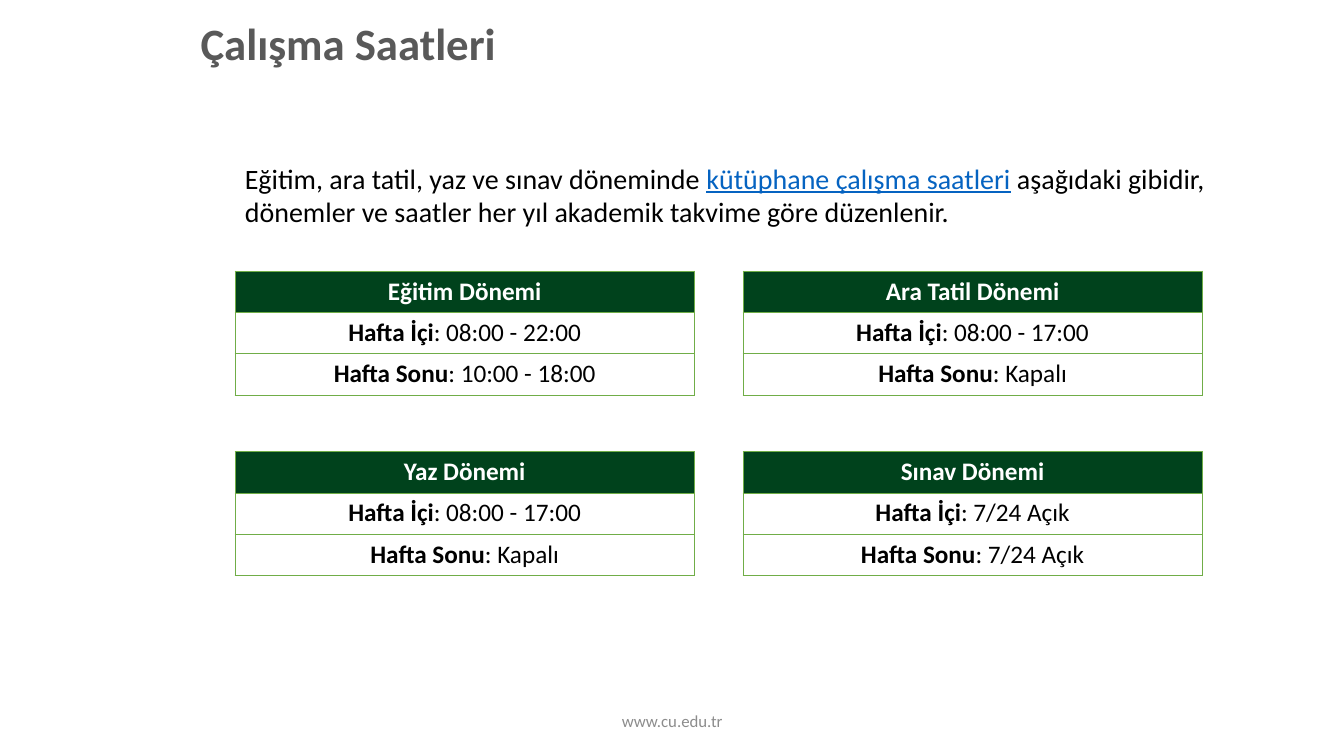
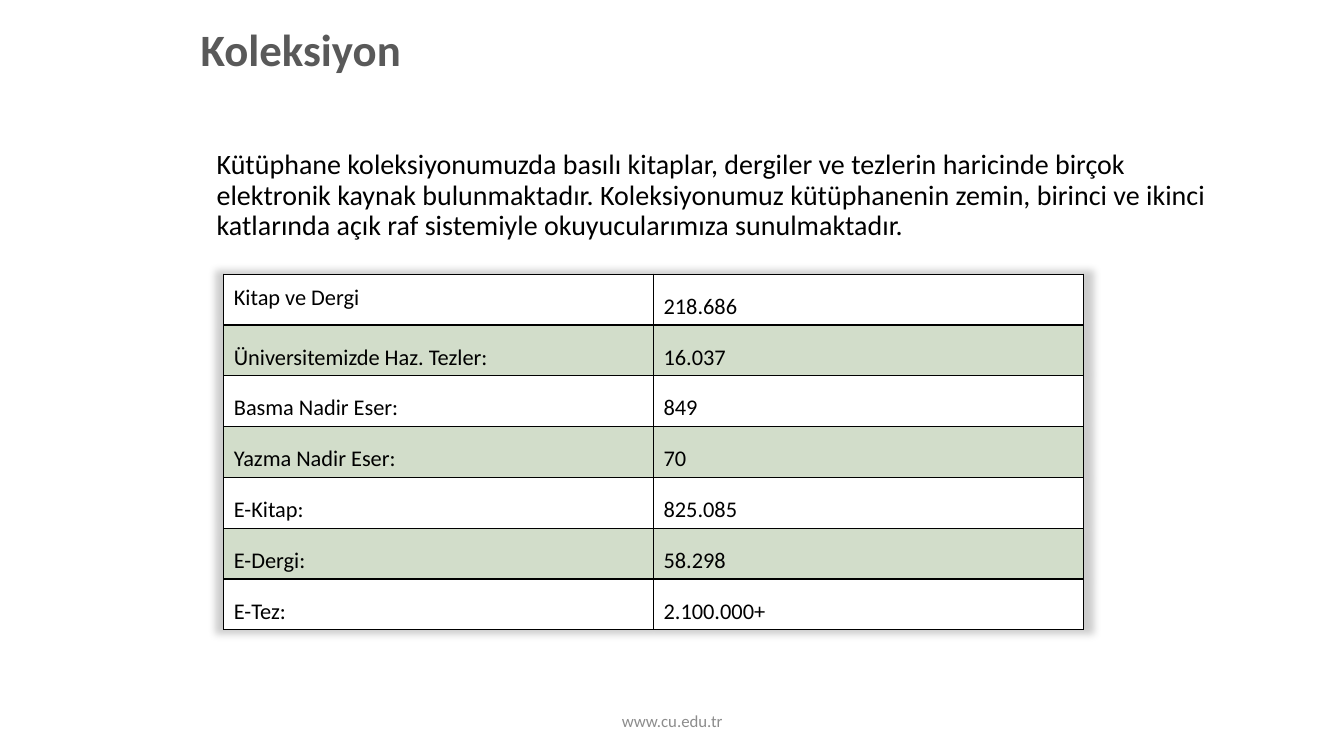
from dataclasses import dataclass

from lxml.etree import SubElement
from pptx import Presentation
from pptx.dml.color import RGBColor as RGB
from pptx.enum.text import MSO_ANCHOR as Anchor, MSO_AUTO_SIZE as Fit, PP_ALIGN as Align
from pptx.oxml import parse_xml
from pptx.oxml.ns import nsdecls, qn
from pptx.util import Cm, Pt


@dataclass(frozen=True)
class Theme:
    font: str = "Calibri"
    ink: str = "000000"
    paper: str = "FFFFFF"
    head: str = "595959"
    foot: str = "8C8C8C"
    link: str = "0563C1"
    dark: str = "00421C"
    edge: str = "70AD47"
    band: str = "D2DDCA"
    title_pt: int = 32
    text_pt: int = 20
    hours_pt: int = 18
    stock_pt: int = 16
    foot_pt: int = 12


T = Theme()
SITE = "www.cu.edu.tr"

HOURS_TITLE = "Çalışma Saatleri"
HOURS_TEXT = [
    ("Eğitim, ara tatil, yaz ve sınav döneminde ", False),
    ("kütüphane çalışma saatleri", True),
    (" aşağıdaki gibidir, dönemler ve saatler her yıl akademik takvime göre düzenlenir.", False),
]
DAYS = ("Hafta İçi", "Hafta Sonu")
TERMS = [
    ("Eğitim Dönemi", "08:00 - 22:00", "10:00 - 18:00"),
    ("Ara Tatil Dönemi", "08:00 - 17:00", "Kapalı"),
    ("Yaz Dönemi", "08:00 - 17:00", "Kapalı"),
    ("Sınav Dönemi", "7/24 Açık", "7/24 Açık"),
]

STOCK_TITLE = "Koleksiyon"
STOCK_TEXT = [(
    "Kütüphane koleksiyonumuzda basılı kitaplar, dergiler ve tezlerin haricinde "
    "birçok elektronik kaynak bulunmaktadır. Koleksiyonumuz kütüphanenin zemin, "
    "birinci ve ikinci katlarında açık raf sistemiyle okuyucularımıza sunulmaktadır.",
    False,
)]
STOCK = [
    ("Kitap ve Dergi", "218.686"),
    ("Üniversitemizde Haz. Tezler:", "16.037"),
    ("Basma Nadir Eser:", "849"),
    ("Yazma Nadir Eser:", "70"),
    ("E-Kitap:", "825.085"),
    ("E-Dergi:", "58.298"),
    ("E-Tez:", "2.100.000+"),
]


def style(para, size, color, bold=False, align=Align.LEFT, lines=None):
    para.alignment = align
    if lines:
        para.line_spacing = lines
    font = para.font
    font.name, font.size, font.bold = T.font, Pt(size), bold
    font.color.rgb = RGB.from_string(color)


def add_box(slide, at, anchor):
    frame = slide.shapes.add_textbox(*map(Cm, at)).text_frame
    frame.word_wrap = True
    frame.vertical_anchor = anchor
    return frame


def add_page(deck, title, top):
    """Add a slide with its title and the shared footer."""
    slide = deck.slides.add_slide(deck.slide_layouts[5])
    head = slide.shapes.title
    head.left, head.top, head.width, head.height = map(Cm, (4.8, top, 26.54, 1.57))
    frame = head.text_frame
    frame.text = title
    frame.auto_size = Fit.NONE
    frame.vertical_anchor = Anchor.MIDDLE
    style(frame.paragraphs[0], T.title_pt, T.head, bold=True, lines=0.9)

    foot = add_box(slide, (11.23, 17.65, 11.43, 1.02), Anchor.MIDDLE)
    foot.text = SITE
    style(foot.paragraphs[0], T.foot_pt, T.foot, align=Align.CENTER)
    return slide


def add_intro(slide, at, parts, anchor=Anchor.TOP, lines=None):
    para = add_box(slide, at, anchor).paragraphs[0]
    style(para, T.text_pt, T.ink, lines=lines)
    for text, linked in parts:
        run = para.add_run()
        run.text = text
        if linked:
            run.font.underline = True
            run.font.color.rgb = RGB.from_string(T.link)


def add_grid(slide, rows, cols, left, top, wide, high):
    """Add a plain table whose cells measure wide by high."""
    table = slide.shapes.add_table(
        rows, cols, Cm(left), Cm(top), Cm(wide * cols), Cm(high * rows)).table
    table.first_row = table.horz_banding = False
    for row in table.rows:
        row.height = Cm(high)
    return table


def paint(cell, fill, edge, width):
    props = cell._tc.get_or_add_tcPr()
    for side in ("lnL", "lnR", "lnT", "lnB"):
        line = SubElement(props, qn(f"a:{side}"), w=str(Pt(width)))
        SubElement(SubElement(line, qn("a:solidFill")), qn("a:srgbClr"), val=edge)
    cell.fill.solid()
    cell.fill.fore_color.rgb = RGB.from_string(fill)


def add_glow(table):
    """Put a soft shadow around the table."""
    table._tbl.tblPr.insert(0, parse_xml(
        f'<a:effectLst {nsdecls("a")}><a:outerShdw blurRad="63500" sx="102000" '
        'sy="102000" algn="ctr" rotWithShape="0"><a:prstClr val="black">'
        '<a:alpha val="20000"/></a:prstClr></a:outerShdw></a:effectLst>'))


def add_term(slide, left, top, name, *times):
    table = add_grid(slide, 3, 1, left, top, 11.58, 1.04)
    head, *body = (table.cell(row, 0) for row in range(3))
    head.text = name
    style(head.text_frame.paragraphs[0], T.hours_pt, T.paper, True, Align.CENTER)
    paint(head, T.dark, T.edge, 0.5)
    for cell, day, time in zip(body, DAYS, times):
        para = cell.text_frame.paragraphs[0]
        style(para, T.hours_pt, T.ink, align=Align.CENTER)
        label = para.add_run()
        label.text = day
        label.font.bold = True
        para.add_run().text = f": {time}"
        paint(cell, T.paper, T.edge, 0.5)


def add_hours(deck):
    slide = add_page(deck, HOURS_TITLE, 0.38)
    add_intro(slide, (5.92, 3.94, 25.43, 1.96), HOURS_TEXT)
    for i, term in enumerate(TERMS):
        row, col = divmod(i, 2)
        add_term(slide, 5.92 + 12.8 * col, 6.83 + 4.55 * row, *term)


def add_stock(deck):
    slide = add_page(deck, STOCK_TITLE, 0.53)
    add_intro(slide, (5.21, 3.1, 26.42, 3.68), STOCK_TEXT, Anchor.MIDDLE, 0.9)
    table = add_grid(slide, len(STOCK), 2, 5.64, 6.91, 10.83, 1.28)
    add_glow(table)
    for r, pair in enumerate(STOCK):
        for c, text in enumerate(pair):
            cell = table.cell(r, c)
            cell.text = text
            first = r == c == 0
            if first:
                cell.margin_top = cell.margin_bottom = Cm(0.25)
            style(cell.text_frame.paragraphs[0], T.stock_pt, T.ink,
                  lines=None if first else 1.5)
            paint(cell, T.band if r % 2 else T.paper, T.ink, 1)


def main():
    deck = Presentation()
    deck.slide_width, deck.slide_height = Cm(33.87), Cm(19.05)
    add_hours(deck)
    add_stock(deck)
    deck.save("out.pptx")


if __name__ == "__main__":
    main()
